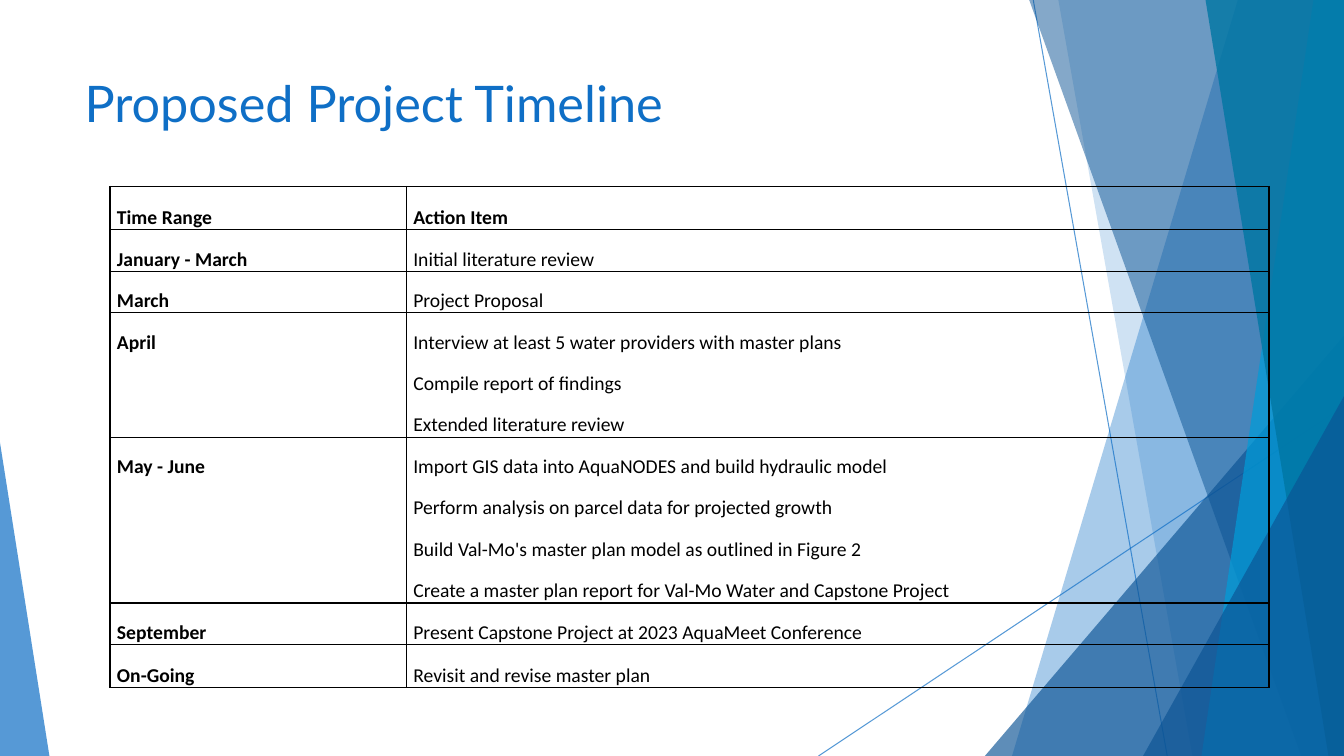
from lxml import etree
from pptx import Presentation
from pptx.dml.color import RGBColor
from pptx.enum.shapes import MSO_CONNECTOR as CONN, MSO_SHAPE as SHAPE
from pptx.enum.text import MSO_ANCHOR as ANCHOR
from pptx.oxml.ns import qn
from pptx.util import Inches, Pt

BLUE = RGBColor(0x0F, 0x6F, 0xC6)
NAVY = RGBColor(0x0B, 0x53, 0x94)
CYAN = RGBColor(0x00, 0x9D, 0xD9)
TEAL = RGBColor(0x00, 0x76, 0xA3)
BLACK = RGBColor(0, 0, 0)

WIDTH, HEIGHT = Inches(13.333), Inches(7.5)
TABLE_LEFT, TABLE_TOP = 8.18, 24.67
COL_WIDTHS = 22.05, 64.2
END_ROW, MID_ROW = 5.73, 5.49

TIMELINE = [
    ("Time Range", ["Action Item"]),
    ("January - March", ["Initial literature review"]),
    ("March", ["Project Proposal"]),
    ("April", ["Interview at least 5 water providers with master plans",
               "Compile report of findings",
               "Extended literature review"]),
    ("May - June", ["Import GIS data into AquaNODES and build hydraulic model",
                    "Perform analysis on parcel data for projected growth",
                    "Build Val-Mo's master plan model as outlined in Figure 2",
                    "Create a master plan report for Val-Mo Water and Capstone Project"]),
    ("September", ["Present Capstone Project at 2023 AquaMeet Conference"]),
    ("On-Going", ["Revisit and revise master plan"]),
]


def across(share):
    """Percent of the slide's width as a length."""
    return round(WIDTH * share / 100)


def down(share):
    """Percent of the slide's height as a length."""
    return round(HEIGHT * share / 100)


def set_opacity(sp, percent):
    for color in sp.element.spPr.iter(qn("a:srgbClr")):
        etree.SubElement(color, qn("a:alpha"), val=str(percent * 1000))


def paint(sp, color, opacity):
    sp.shadow.inherit = False
    sp.fill.solid()
    sp.fill.fore_color.rgb = color
    sp.line.fill.background()
    set_opacity(sp, opacity)


def add_thin_line(slide, x1, y1, x2, y2):
    line = slide.shapes.add_connector(
        CONN.STRAIGHT, across(x1), down(y1), across(x2), down(y2))
    line.line.color.rgb = BLUE
    line.line.width = Pt(0.75)
    set_opacity(line, 70)
    etree.SubElement(line.element.spPr, qn("a:effectLst"))


def add_band(slide, top_x, bottom_x, color, opacity):
    """Full-height area between a slanted edge and the slide's right side."""
    builder = slide.shapes.build_freeform(across(top_x), 0, scale=1.0)
    builder.add_line_segments([(WIDTH, 0), (WIDTH, HEIGHT),
                               (across(bottom_x), HEIGHT)], close=True)
    paint(builder.convert_to_shape(), color, opacity)


def add_corner(slide, left, right, top, apex, color, opacity):
    """Triangle standing on the slide's bottom edge."""
    sp = slide.shapes.add_shape(SHAPE.ISOSCELES_TRIANGLE, across(left), down(top),
                                across(right - left), down(100 - top))
    sp.adjustments[0] = apex
    paint(sp, color, opacity)


def write(tf, text, color, **font):
    p = tf.paragraphs[0]
    r = p.add_run()
    r.text = text
    r.font.color.rgb = color
    for name, value in font.items():
        setattr(r.font, name, value)
    return p


def add_title(slide, text):
    box = slide.shapes.add_textbox(across(5.55), down(8.93), across(70.5), down(19.2))
    tf = box.text_frame
    tf.word_wrap = True
    tf.vertical_anchor = ANCHOR.TOP
    write(tf, text, BLUE, name="Lato", size=Pt(36))


def set_borders(cell, top, bottom):
    """Draw the sides always, and the top and bottom edges where asked."""
    props = cell._tc.get_or_add_tcPr()
    for side, shown in {"L": True, "R": True, "T": top, "B": bottom}.items():
        ln = etree.SubElement(props, qn(f"a:ln{side}"), w=str(Pt(1)))
        if shown:
            fill = etree.SubElement(ln, qn("a:solidFill"))
            etree.SubElement(fill, qn("a:srgbClr"), val=str(BLACK))
        else:
            etree.SubElement(ln, qn("a:noFill"))


def fill_cell(cell, text, bold, top, bottom):
    form = {"margin_left": Inches(0.07), "margin_right": Inches(0.07),
            "margin_top": 0, "margin_bottom": 0, "vertical_anchor": ANCHOR.BOTTOM}
    for name, value in form.items():
        setattr(cell, name, value)
    set_borders(cell, top, bottom)
    cell.fill.background()
    if text:
        p = write(cell.text_frame, text, BLACK, name="Calibri", size=Pt(14), bold=bold)
        p.line_spacing = 1.07


def add_timeline(slide, timeline):
    count = sum(len(actions) for _, actions in timeline)
    heights = [END_ROW] + [MID_ROW] * (count - 2) + [END_ROW]
    table = slide.shapes.add_table(
        count, len(COL_WIDTHS), across(TABLE_LEFT), down(TABLE_TOP),
        across(sum(COL_WIDTHS)), down(sum(heights))).table
    table.first_row = table.horz_banding = False
    for column, width in zip(table.columns, COL_WIDTHS):
        column.width = across(width)
    for row, height in zip(table.rows, heights):
        row.height = down(height)

    row = 0
    for months, actions in timeline:
        for i, action in enumerate(actions):
            edges = i == 0, i == len(actions) - 1
            fill_cell(table.cell(row, 0), months if i == 0 else "", True, *edges)
            fill_cell(table.cell(row, 1), action, row == 0, *edges)
            row += 1


def add_backdrop(slide):
    add_thin_line(slide, 76.88, 0, 86.85, 100)
    add_thin_line(slide, 100, 53.73, 60.9, 100)
    add_band(slide, 92.1, 75.3, BLUE, 36)
    add_band(slide, 78.75, 88.73, BLUE, 20)
    add_corner(slide, 73.28, 100, 44.4, 1, NAVY, 66)
    add_band(slide, 76.58, 96.83, NAVY, 50)
    add_band(slide, 97.73, 89.4, CYAN, 70)
    add_band(slide, 89.7, 98.85, TEAL, 80)
    add_corner(slide, 85.05, 100, 52.4, 1, NAVY, 66)
    add_corner(slide, 0, 3.68, 58.53, 0, BLUE, 70)


def main():
    prs = Presentation()
    prs.slide_width, prs.slide_height = WIDTH, HEIGHT
    slide = prs.slides.add_slide(prs.slide_layouts[6])
    add_backdrop(slide)
    add_title(slide, "Proposed Project Timeline")
    add_timeline(slide, TIMELINE)
    prs.save("out.pptx")


if __name__ == "__main__":
    main()
